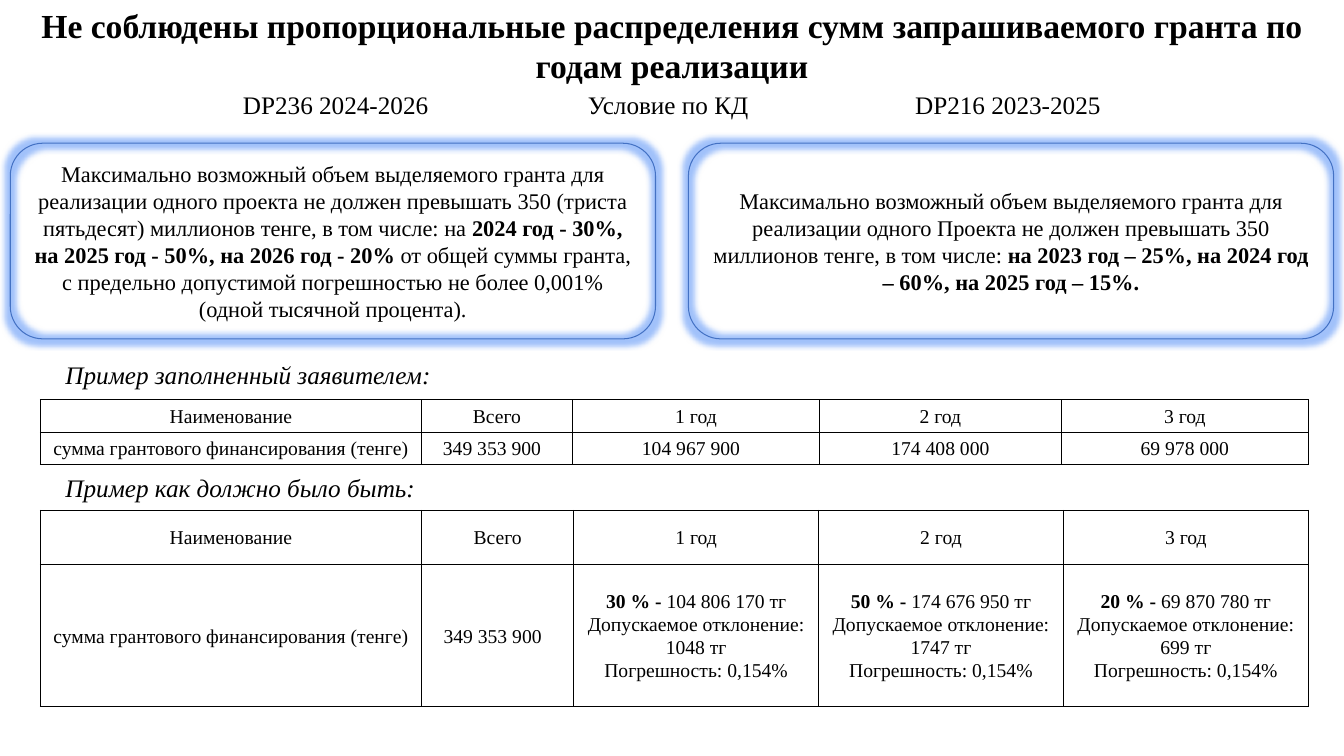
"""Build a slide comparing grant distribution rules with two example tables."""
from dataclasses import dataclass

import lxml.etree
import pptx
import pptx.dml.color
import pptx.enum.shapes
import pptx.enum.text
import pptx.oxml
import pptx.oxml.ns
import pptx.util

Cm = pptx.util.Cm
Pt = pptx.util.Pt
ALIGN = pptx.enum.text.PP_ALIGN
MIDDLE = pptx.enum.text.MSO_ANCHOR.MIDDLE
FONT = "Times New Roman"
BLACK = "000000"
BLUE = "4472C4"
TITLE = {"size": Pt(24), "bold": True}
HEADING = {"size": Pt(18)}
CAPTION = {"size": Pt(18), "italic": True}
RULE = {"size": Pt(16)}
CELL = {"size": Pt(14)}
NS = pptx.oxml.ns.nsdecls("a")


@dataclass
class Label:
    text: str
    left: float
    top: float
    width: float
    height: float
    font: dict
    align: ALIGN = ALIGN.CENTER


@dataclass
class RuleBox:
    text: str
    left: float


@dataclass
class Grid:
    top: float
    widths: list[float]
    heights: list[float]
    values: list[str]
    shifted: tuple[int, ...]


LABELS = [
    Label("Не соблюдены пропорциональные распределения сумм запрашиваемого гранта по годам реализации",
          0, 0, 33.87, 2.31, TITLE),
    Label("DP236 2024-2026", 4.09, 2.12, 8.74, 1.02, HEADING),
    Label("Условие по КД", 11.99, 2.12, 9.7, 1.02, HEADING),
    Label("DP216 2023-2025", 21.03, 2.12, 8.74, 1.02, HEADING),
    Label("Пример заполненный заявителем:", 1.4, 8.94, 12.52, 1.02, CAPTION, ALIGN.LEFT),
    Label("Пример как должно было быть:", 1.4, 11.77, 17.07, 1.02, CAPTION, ALIGN.LEFT),
]
RULES = [
    RuleBox("Максимально возможный объем выделяемого гранта для реализации одного проекта не должен "
            "превышать 350 (триста пятьдесят) миллионов тенге, в том числе: на **2024 год - 30%, "
            "на 2025 год - 50%, на 2026 год - 20%** от общей суммы гранта, с предельно допустимой "
            "погрешностью не более 0,001% (одной тысячной процента).", 0.26),
    RuleBox("Максимально возможный объем выделяемого гранта для реализации одного Проекта не должен "
            "превышать 350 миллионов тенге, в том числе: **на 2023 год – 25%, на 2024 год – 60%, "
            "на 2025 год – 15%.**", 17.35),
]
HEADERS = ["Наименование", "Всего", "1 год", "2 год", "3 год"]
ROW_NAME = "сумма грантового финансирования (тенге)"
TOTAL = "349 353 900"
SHARES = [("30", "104 806 170", "1048"), ("50", "174 676 950", "1747"), ("20", "69 870 780", "699")]
GRIDS = [
    Grid(10.07, [9.6, 3.81, 6.22, 6.1, 6.22], [0.82, 0.82],
         [ROW_NAME, TOTAL, "104 967 900", "174 408 000", "69 978 000"], (1, 2)),
    Grid(12.86, [9.6, 3.84, 6.17, 6.17, 6.17], [1.37, 3.58],
         [ROW_NAME, TOTAL] + [f"**{share} % - **{amount} тг\nДопускаемое отклонение: {margin} тг\n"
                              "Погрешность: 0,154%" for share, amount, margin in SHARES], (1,)),
]


def color(value: str) -> pptx.dml.color.RGBColor:
    """Turn a hex string into a colour."""
    return pptx.dml.color.RGBColor.from_string(value)


def apply(target: object, values: dict) -> None:
    """Set attributes from a dict."""
    for name, value in values.items():
        setattr(target, name, value)


def write(tf: object, text: str, font: dict, layout: dict) -> None:
    """Write paragraphs in which double asterisks switch bold on and off."""
    for i, line in enumerate(text.split("\n")):
        p = tf.paragraphs[0] if i == 0 else tf.add_paragraph()
        apply(p, layout)
        for j, part in enumerate(line.split("**")):
            if part:
                r = p.add_run()
                r.text = part
                apply(r.font, {"name": FONT, **font})
                r.font.color.rgb = color(BLACK)
                if j % 2:
                    r.font.bold = True


def add_label(s: object, label: Label) -> None:
    """Add a text box."""
    sp = s.shapes.add_textbox(Cm(label.left), Cm(label.top), Cm(label.width), Cm(label.height))
    tf = sp.text_frame
    apply(tf, {"word_wrap": True, "auto_size": pptx.enum.text.MSO_AUTO_SIZE.SHAPE_TO_FIT_TEXT})
    write(tf, label.text, label.font, {"alignment": label.align})


def add_rule(s: object, rule: RuleBox) -> None:
    """Add a glowing rounded box."""
    sp = s.shapes.add_shape(pptx.enum.shapes.MSO_SHAPE.ROUNDED_RECTANGLE,
                            Cm(rule.left), Cm(3.61), Cm(16.26), Cm(4.93))
    sp.shadow.inherit = False
    sp.fill.background()
    sp.line.color.rgb = color(BLUE)
    sp.line.width = Pt(0.75)
    effects = sp._element.spPr.find(pptx.oxml.ns.qn("a:effectLst"))
    effects.append(lxml.etree.fromstring(
        f'<a:glow {NS} rad="101600"><a:srgbClr val="{BLUE}"><a:satMod val="175000"/>'
        '<a:alpha val="40000"/></a:srgbClr></a:glow>'))
    apply(sp.text_frame, {"word_wrap": True, "vertical_anchor": MIDDLE})
    write(sp.text_frame, rule.text, RULE, {"alignment": ALIGN.CENTER})


def add_borders(cell: object) -> None:
    """Draw a black line on each side of a cell."""
    tc_pr = cell._tc.get_or_add_tcPr()
    for i, side in enumerate("LRTB"):
        tc_pr.insert(i, pptx.oxml.parse_xml(
            f'<a:ln{side} {NS} w="12700"><a:solidFill><a:srgbClr val="{BLACK}"/></a:solidFill></a:ln{side}>'))


def add_grid(s: object, grid: Grid) -> None:
    """Add a table with a header row and a value row."""
    table = s.shapes.add_table(2, len(HEADERS), Cm(1.02), Cm(grid.top),
                               Cm(sum(grid.widths)), Cm(sum(grid.heights))).table
    apply(table, {"first_row": False, "horz_banding": False})
    for column, width in zip(table.columns, grid.widths):
        column.width = Cm(width)
    for i, (height, texts) in enumerate(zip(grid.heights, [HEADERS, grid.values])):
        table.rows[i].height = Cm(height)
        for j, text in enumerate(texts):
            cell = table.cell(i, j)
            cell.fill.background()
            add_borders(cell)
            right = 0.43 if i and j in grid.shifted else 0.18
            apply(cell, {"vertical_anchor": MIDDLE, "margin_left": Cm(0.18), "margin_right": Cm(right),
                         "margin_top": 0, "margin_bottom": 0})
            gap = Pt(3 if i == 0 or j == 0 else 0)
            write(cell.text_frame, text, CELL, {"alignment": ALIGN.CENTER, "line_spacing": 1.07,
                                                "space_before": gap, "space_after": gap})


def main() -> None:
    """Build and save the slide."""
    prs = pptx.Presentation()
    apply(prs, {"slide_width": Cm(33.87), "slide_height": Cm(19.05)})
    s = prs.slides.add_slide(prs.slide_layouts[6])
    for rule in RULES:
        add_rule(s, rule)
    for grid in GRIDS:
        add_grid(s, grid)
    for label in LABELS:
        add_label(s, label)
    prs.save("out.pptx")


if __name__ == "__main__":
    main()
